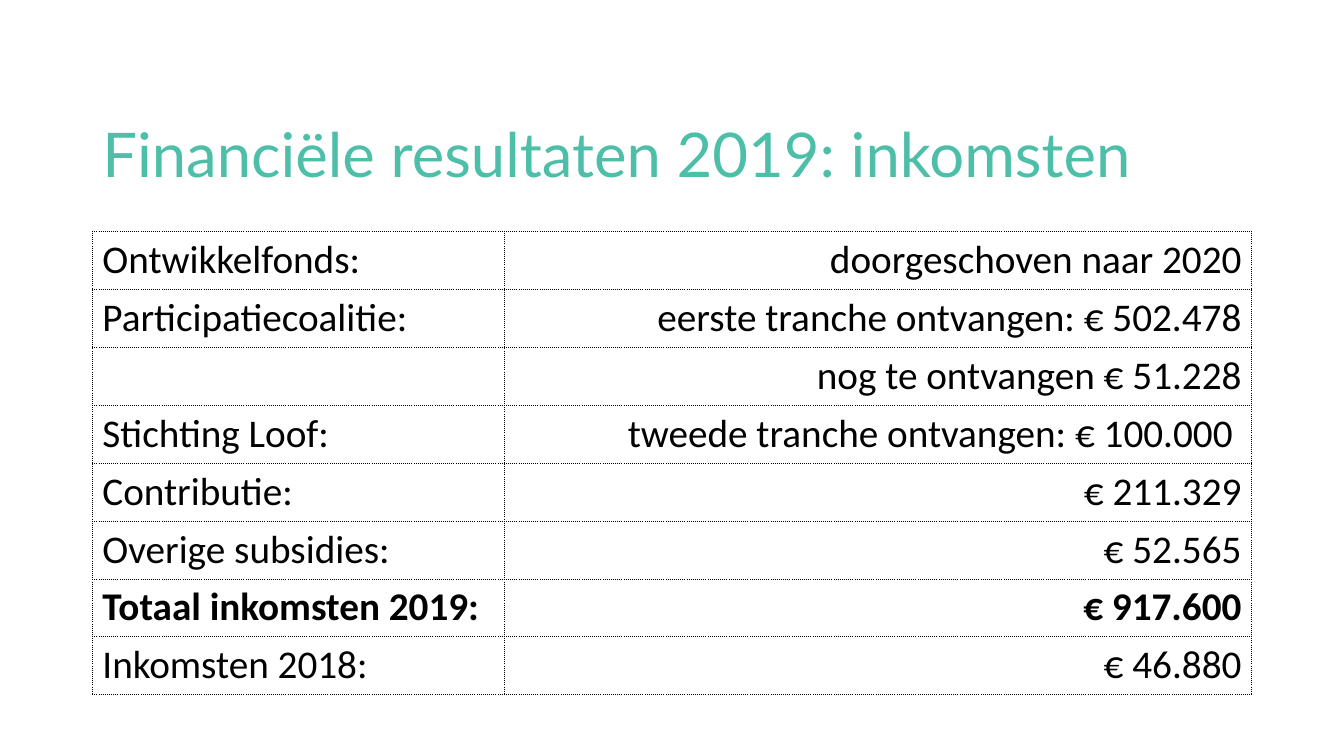
from lxml import etree
from pptx import Presentation
from pptx.dml.color import RGBColor
from pptx.enum import text
from pptx.oxml import ns
from pptx.util import Pt

COLOURS = {"title": "4DBFA9", "ink": "000000", "cell": "FFFFFF"}
LEFT, WIDTH = 66, 828
LABEL_WIDTH = 293.8
ROW_HEIGHT = 41.4
BORDER_WIDTH = 0.25
INCOME = [
    ("Ontwikkelfonds:", "doorgeschoven naar 2020"),
    ("Participatiecoalitie:", "eerste tranche ontvangen: € 502.478"),
    ("", "nog te ontvangen € 51.228"),
    ("Stichting Loof:", "tweede tranche ontvangen: € 100.000 "),
    ("Contributie:", "€ 211.329"),
    ("Overige subsidies:", "€ 52.565"),
    ("Totaal inkomsten 2019:", "€ 917.600"),
    ("Inkomsten 2018:", "€ 46.880"),
]
TOTAL_ROW = 6


def write(para, words, colour, **formats):
    para.text = words
    para.font.color.rgb = RGBColor.from_string(COLOURS[colour])
    for name, value in formats.items():
        setattr(para.font, name, value)


def add_title(page, words):
    box = page.shapes.add_textbox(Pt(LEFT), Pt(60.5), Pt(WIDTH), Pt(104.4))
    frame = box.text_frame
    frame.word_wrap = True
    frame.vertical_anchor = text.MSO_ANCHOR.MIDDLE
    para = frame.paragraphs[0]
    para.line_spacing = 0.9
    write(para, words, "title", name="Lato", size=Pt(44))


def add_dotted_borders(cell):
    properties = cell._tc.get_or_add_tcPr()
    for side in ("lnL", "lnR", "lnT", "lnB"):
        line = etree.SubElement(properties, ns.qn(f"a:{side}"), w=str(Pt(BORDER_WIDTH)))
        fill = etree.SubElement(line, ns.qn("a:solidFill"))
        etree.SubElement(fill, ns.qn("a:srgbClr"), val=COLOURS["ink"])
        etree.SubElement(line, ns.qn("a:prstDash"), val="sysDot")


def fill_cell(cell, words, align, bold):
    add_dotted_borders(cell)
    cell.fill.solid()
    cell.fill.fore_color.rgb = RGBColor.from_string(COLOURS["cell"])
    para = cell.text_frame.paragraphs[0]
    para.alignment = align
    write(para, words, "ink", name="Calibri", size=Pt(28), bold=bold)


def add_income_table(page, rows):
    table = page.shapes.add_table(
        len(rows), 2, Pt(LEFT), Pt(165), Pt(WIDTH), Pt(ROW_HEIGHT * len(rows))
    ).table
    table.first_row = table.horz_banding = False
    for column, width in zip(table.columns, (LABEL_WIDTH, WIDTH - LABEL_WIDTH)):
        column.width = Pt(width)
    aligns = (text.PP_ALIGN.LEFT, text.PP_ALIGN.RIGHT)
    for index, row in enumerate(rows):
        table.rows[index].height = Pt(ROW_HEIGHT)
        for cell, words, align in zip(table.rows[index].cells, row, aligns):
            fill_cell(cell, words, align, index == TOTAL_ROW)


def main():
    deck = Presentation()
    deck.slide_width, deck.slide_height = Pt(960), Pt(540)
    page = deck.slides.add_slide(deck.slide_layouts[6])
    add_title(page, "Financiële resultaten 2019: inkomsten")
    add_income_table(page, INCOME)
    deck.save("out.pptx")


if __name__ == "__main__":
    main()
